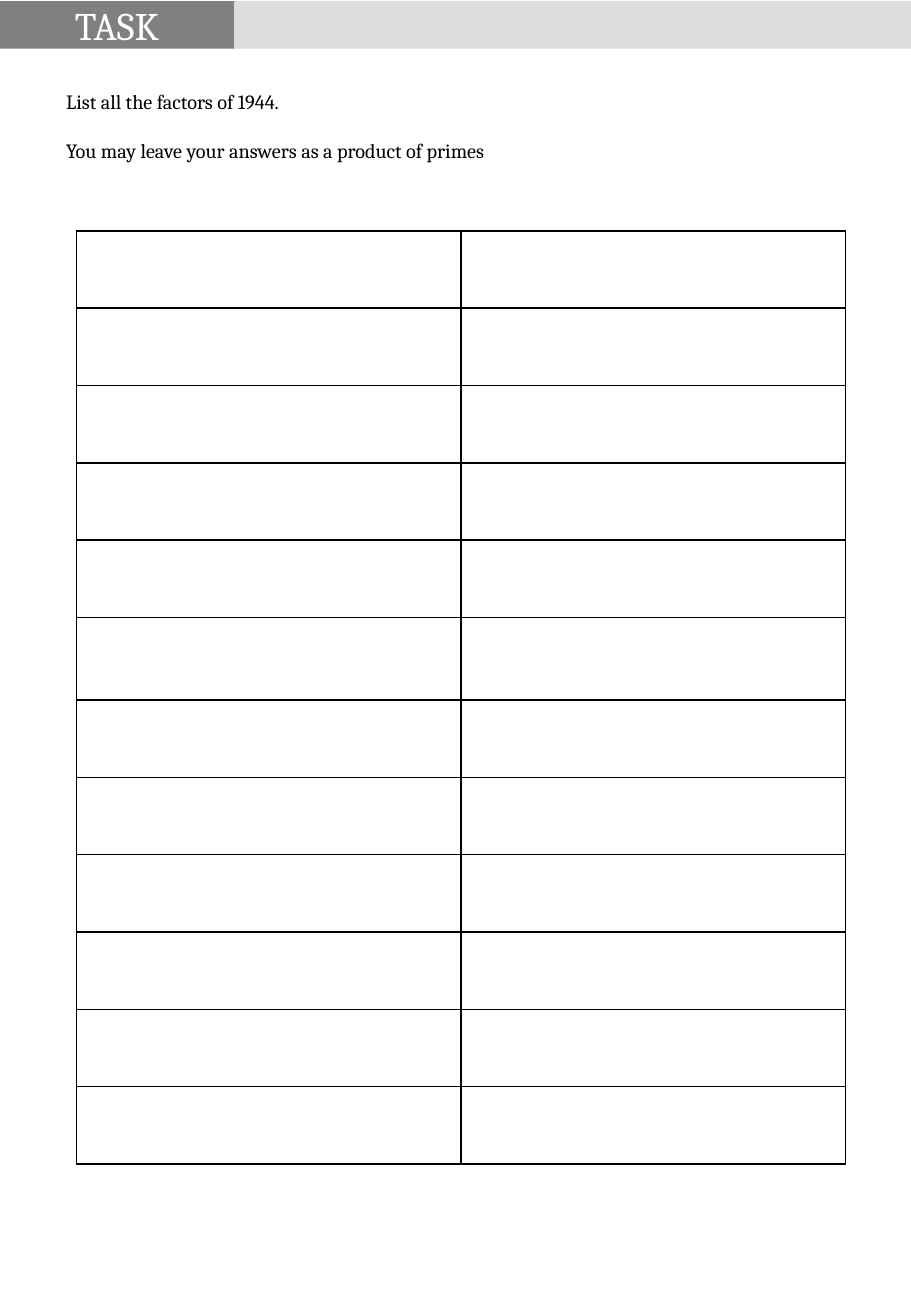
from dataclasses import dataclass

from lxml import etree
from pptx import Presentation
from pptx.dml.color import RGBColor
from pptx.enum import shapes, text
from pptx.oxml.ns import qn
from pptx.util import Inches, Pt

HEADING = "TASK"
INSTRUCTIONS = [
    "List all the factors of 1944.",
    "You may leave your answers as a product of primes",
]
ANSWER_ROWS, ANSWER_COLUMNS = 12, 2
TALL_ROW = 5


@dataclass(frozen=True)
class Theme:
    font: str = "Cambria"
    heading_size: float = 23.1
    body_size: float = 12
    paragraph_gap: float = 14.5
    border_width: float = 1
    dark: str = "808080"
    light: str = "DDDDDD"
    white: str = "FFFFFF"
    black: str = "000000"


THEME = Theme()
PAGE_WIDTH, PAGE_HEIGHT = 7.5, 10.83
BAND_TOP, BAND_HEIGHT, HEADING_WIDTH = 0.01, 0.39, 1.93
GRID_LEFT, GRID_TOP, GRID_WIDTH, GRID_HEIGHT = 0.63, 1.9, 6.33, 7.68
TALL_HEIGHT = 0.68


def box(*lengths):
    return [Inches(length) for length in lengths]


def paint(fill, color):
    fill.solid()
    fill.fore_color.rgb = RGBColor.from_string(color)


def write(paragraph, words, size, color):
    run = paragraph.add_run()
    run.text = words
    run.font.name = THEME.font
    run.font.size = Pt(size)
    run.font.color.rgb = RGBColor.from_string(color)


def add_plain_shape(slide, preset, *lengths):
    shape = slide.shapes.add_shape(preset, *box(*lengths))
    shape.shadow.inherit = False
    shape.line.fill.background()
    return shape


def add_header(slide):
    heading = slide.shapes.title
    heading.left, heading.top, heading.width, heading.height = box(
        0, BAND_TOP, HEADING_WIDTH, BAND_HEIGHT)
    paint(heading.fill, THEME.dark)
    frame = heading.text_frame
    frame.auto_size = text.MSO_AUTO_SIZE.NONE
    frame.vertical_anchor = text.MSO_ANCHOR.MIDDLE
    frame.paragraphs[0].alignment = text.PP_ALIGN.CENTER
    write(frame.paragraphs[0], HEADING, THEME.heading_size, THEME.white)

    band = add_plain_shape(
        slide, shapes.MSO_SHAPE.RECTANGLE,
        HEADING_WIDTH, BAND_TOP, PAGE_WIDTH - HEADING_WIDTH, BAND_HEIGHT)
    paint(band.fill, THEME.light)


def add_instructions(slide):
    panel = add_plain_shape(
        slide, shapes.MSO_SHAPE.ROUNDED_RECTANGLE, 0.41, 0.65, 6.68, 6.2)
    panel.adjustments[0] = 0.02
    panel.fill.background()
    frame = panel.text_frame
    frame.word_wrap = True
    frame.vertical_anchor = text.MSO_ANCHOR.TOP
    for index, instruction in enumerate(INSTRUCTIONS):
        paragraph = frame.add_paragraph() if index else frame.paragraphs[0]
        paragraph.alignment = text.PP_ALIGN.LEFT
        if index:
            paragraph.space_before = Pt(THEME.paragraph_gap)
        write(paragraph, instruction, THEME.body_size, THEME.black)


def outline(cell):
    cell.fill.background()
    properties = cell._tc.get_or_add_tcPr()
    for position, side in enumerate(("lnL", "lnR", "lnT", "lnB")):
        border = etree.Element(qn(f"a:{side}"), w=str(Pt(THEME.border_width)))
        fill = etree.SubElement(border, qn("a:solidFill"))
        etree.SubElement(fill, qn("a:srgbClr"), val=THEME.black)
        properties.insert(position, border)


def add_answer_grid(slide):
    grid = slide.shapes.add_table(
        ANSWER_ROWS, ANSWER_COLUMNS,
        *box(GRID_LEFT, GRID_TOP, GRID_WIDTH, GRID_HEIGHT)).table
    grid.first_row = grid.horz_banding = False
    for column in grid.columns:
        column.width = Inches(GRID_WIDTH / ANSWER_COLUMNS)
    row_height = (GRID_HEIGHT - TALL_HEIGHT) / (ANSWER_ROWS - 1)
    for index, row in enumerate(grid.rows):
        row.height = Inches(TALL_HEIGHT if index == TALL_ROW else row_height)
    for cell in grid.iter_cells():
        outline(cell)


def main():
    deck = Presentation()
    deck.slide_width, deck.slide_height = box(PAGE_WIDTH, PAGE_HEIGHT)
    slide = deck.slides.add_slide(deck.slide_layouts[5])
    add_header(slide)
    add_instructions(slide)
    add_answer_grid(slide)
    deck.save("out.pptx")


if __name__ == "__main__":
    main()
